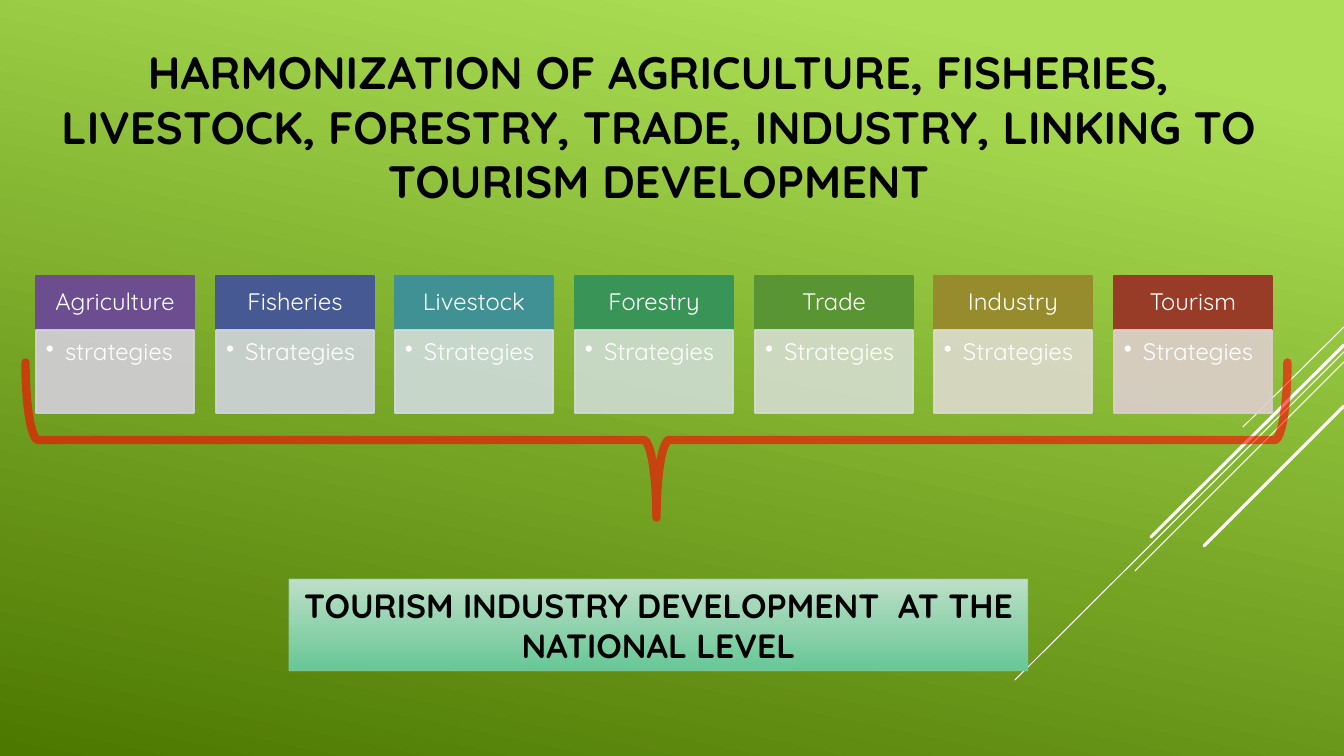
"""Build the slide on harmonizing seven sectors towards tourism development."""
from dataclasses import dataclass

from lxml.etree import SubElement
from pptx import Presentation
from pptx.dml.color import RGBColor
from pptx.dml.fill import FillFormat
from pptx.dml.line import LineFormat
from pptx.enum.shapes import MSO_CONNECTOR, MSO_SHAPE
from pptx.enum.text import MSO_ANCHOR, PP_ALIGN
from pptx.oxml.ns import qn
from pptx.shapes.autoshape import Shape
from pptx.slide import Slide
from pptx.util import Emu, Pt


@dataclass(frozen=True)
class Theme:
    font: str = "Quicksand"
    title_size: float = 32.4
    goal_size: float = 24
    sector_size: float = 17
    dark: str = "000000"
    light: str = "FFFFFF"
    brace: str = "FF0000"
    goal_line: str = "8DBE9D"
    backdrop: tuple[tuple[float, str], ...] = ((0.1, "ACDF55"), (1, "4C7800"))
    goal_fill: tuple[tuple[float, str], ...] = ((0, "BDDFC7"), (1, "67C796"))


@dataclass(frozen=True)
class Box:
    left: int
    top: int
    width: int
    height: int

    def emu(self) -> tuple[Emu, ...]:
        return tuple(px(n) for n in (self.left, self.top, self.width, self.height))


@dataclass(frozen=True)
class Sector:
    name: str
    strategy: str
    color: str
    tint: str


@dataclass(frozen=True)
class Ray:
    start_y: int
    end_x: int
    end_y: int
    weight: float


THEME = Theme()
SLIDE_WIDTH, SLIDE_HEIGHT = 1344, 756
TITLE = Box(30, 43, 1257, 166)
BRACE = Box(579, -191, 155, 1262)
GOAL = Box(289, 579, 739, 92)
FIRST_LEFT, LAST_LEFT, SECTOR_WIDTH = 36, 1114, 158
NAME_TOP, NAME_HEIGHT, STRATEGY_HEIGHT = 276, 54, 83
BULLET_INDENT = 19

SECTORS = [
    Sector("Agriculture", "strategies", "6C4D90", "D4D0DB"),
    Sector("Fisheries", "Strategies", "465992", "CFD4DC"),
    Sector("Livestock", "Strategies", "3F9194", "CFDCDB"),
    Sector("Forestry", "Strategies", "399557", "CEDCD2"),
    Sector("Trade", "Strategies", "599633", "D5DDCE"),
    Sector("Industry", "Strategies", "978C2D", "DDDACD"),
    Sector("Tourism", "Strategies", "983C27", "DDCECD"),
]
RAYS = [
    Ray(327, 1243, 427, 0.75),
    Ray(352, 1015, 680, 0.75),
    Ray(362, 1135, 571, 0.75),
    Ray(345, 1151, 537, 2.25),
    Ray(406, 1204, 546, 2.25),
]


def px(length: int) -> Emu:
    """Turn slide pixels into EMU."""
    return Emu(round(length * 12192000 / SLIDE_WIDTH))


def set_solid(fill: FillFormat, color: str, opacity: int = 100) -> None:
    """Fill with one colour at an opacity in percent."""
    fill.solid()
    fill.fore_color.rgb = RGBColor.from_string(color)
    if opacity < 100:
        srgb = fill._xPr.find(f"{qn('a:solidFill')}/{qn('a:srgbClr')}")
        SubElement(srgb, qn("a:alpha"), val=str(opacity * 1000))


def set_gradient(fill: FillFormat, stops: tuple[tuple[float, str], ...], angle: int) -> None:
    """Fill with a two-stop gradient at a counter-clockwise angle."""
    fill.gradient()
    fill.gradient_angle = angle
    for stop, (position, color) in zip(fill.gradient_stops, stops):
        stop.position = position
        stop.color.rgb = RGBColor.from_string(color)


def set_line(line: LineFormat, color: str, weight: float, opacity: int = 100) -> None:
    """Style an outline or a connector."""
    line.width = Pt(weight)
    set_solid(line.fill, color, opacity)


def write(shape: Shape, text: str, size: float, color: str, bold: bool = False,
          align: PP_ALIGN = PP_ALIGN.CENTER, anchor: MSO_ANCHOR = MSO_ANCHOR.MIDDLE,
          spacing: float | None = None) -> None:
    """Put one formatted paragraph into a shape."""
    frame = shape.text_frame
    frame.text = text
    frame.word_wrap = True
    frame.vertical_anchor = anchor
    paragraph = frame.paragraphs[0]
    paragraph.alignment = align
    paragraph.line_spacing = spacing
    font = paragraph.runs[0].font
    font.name, font.size, font.bold = THEME.font, Pt(size), bold
    font.color.rgb = RGBColor.from_string(color)


def set_insets(shape: Shape, left: int, top: int, right: int, bottom: int) -> None:
    """Set the text margins of a shape."""
    frame = shape.text_frame
    frame.margin_left, frame.margin_top = px(left), px(top)
    frame.margin_right, frame.margin_bottom = px(right), px(bottom)


def add_preset(slide: Slide, kind: MSO_SHAPE, box: Box) -> Shape:
    """Add a preset shape without a shadow."""
    shape = slide.shapes.add_shape(kind, *box.emu())
    shape.shadow.inherit = False
    return shape


def add_ray(slide: Slide, ray: Ray) -> None:
    """Draw a diagonal line from the right edge of the slide."""
    line = slide.shapes.add_connector(MSO_CONNECTOR.STRAIGHT, px(SLIDE_WIDTH), px(ray.start_y),
                                      px(ray.end_x), px(ray.end_y))
    set_line(line.line, THEME.light, ray.weight)
    line.line._ln.set("cap", "rnd")
    SubElement(line._element.spPr, qn("a:effectLst"))


def add_sector(slide: Slide, sector: Sector, left: int) -> None:
    """Draw a sector name above its bulleted strategy."""
    name = add_preset(slide, MSO_SHAPE.RECTANGLE, Box(left, NAME_TOP, SECTOR_WIDTH, NAME_HEIGHT))
    set_solid(name.fill, sector.color)
    set_line(name.line, sector.color, 1.25)
    set_insets(name, 13, 8, 13, 8)
    write(name, sector.name, THEME.sector_size, THEME.light, spacing=0.9)

    strategy = add_preset(slide, MSO_SHAPE.RECTANGLE,
                          Box(left, NAME_TOP + NAME_HEIGHT, SECTOR_WIDTH, STRATEGY_HEIGHT))
    set_solid(strategy.fill, sector.tint, 90)
    set_line(strategy.line, sector.tint, 1.25, 90)
    set_insets(strategy, 10, 10, 13, 15)
    write(strategy, sector.strategy, THEME.sector_size, THEME.light,
          align=PP_ALIGN.LEFT, anchor=MSO_ANCHOR.TOP, spacing=0.9)
    properties = strategy.text_frame.paragraphs[0]._p.get_or_add_pPr()
    properties.set("marL", str(px(BULLET_INDENT)))
    properties.set("indent", str(-px(BULLET_INDENT)))
    SubElement(properties, qn("a:buChar"), char="•")


def main() -> None:
    """Compose and save the slide."""
    deck = Presentation()
    deck.slide_width, deck.slide_height = px(SLIDE_WIDTH), px(SLIDE_HEIGHT)
    slide = deck.slides.add_slide(deck.slide_layouts[6])
    set_gradient(slide.background.fill, THEME.backdrop, 258)
    for ray in RAYS:
        add_ray(slide, ray)

    title = slide.shapes.add_textbox(*TITLE.emu())
    write(title, "HARMONIZATION OF AGRICULTURE, FISHERIES, LIVESTOCK, FORESTRY, TRADE, "
          "INDUSTRY, LINKING TO TOURISM DEVELOPMENT", THEME.title_size, THEME.dark, bold=True)

    for index, sector in enumerate(SECTORS):
        add_sector(slide, sector,
                   FIRST_LEFT + round(index * (LAST_LEFT - FIRST_LEFT) / (len(SECTORS) - 1)))

    brace = add_preset(slide, MSO_SHAPE.LEFT_BRACE, BRACE)
    brace.rotation = 270
    brace.fill.background()
    set_line(brace.line, THEME.brace, 6, 60)
    brace.line._ln.set("cap", "rnd")

    goal = add_preset(slide, MSO_SHAPE.RECTANGLE, GOAL)
    set_gradient(goal.fill, THEME.goal_fill, 270)
    set_line(goal.line, THEME.goal_line, 0.75, 60)
    write(goal, "TOURISM INDUSTRY DEVELOPMENT  AT THE NATIONAL LEVEL",
          THEME.goal_size, THEME.dark, bold=True)
    deck.save("out.pptx")


if __name__ == "__main__":
    main()
